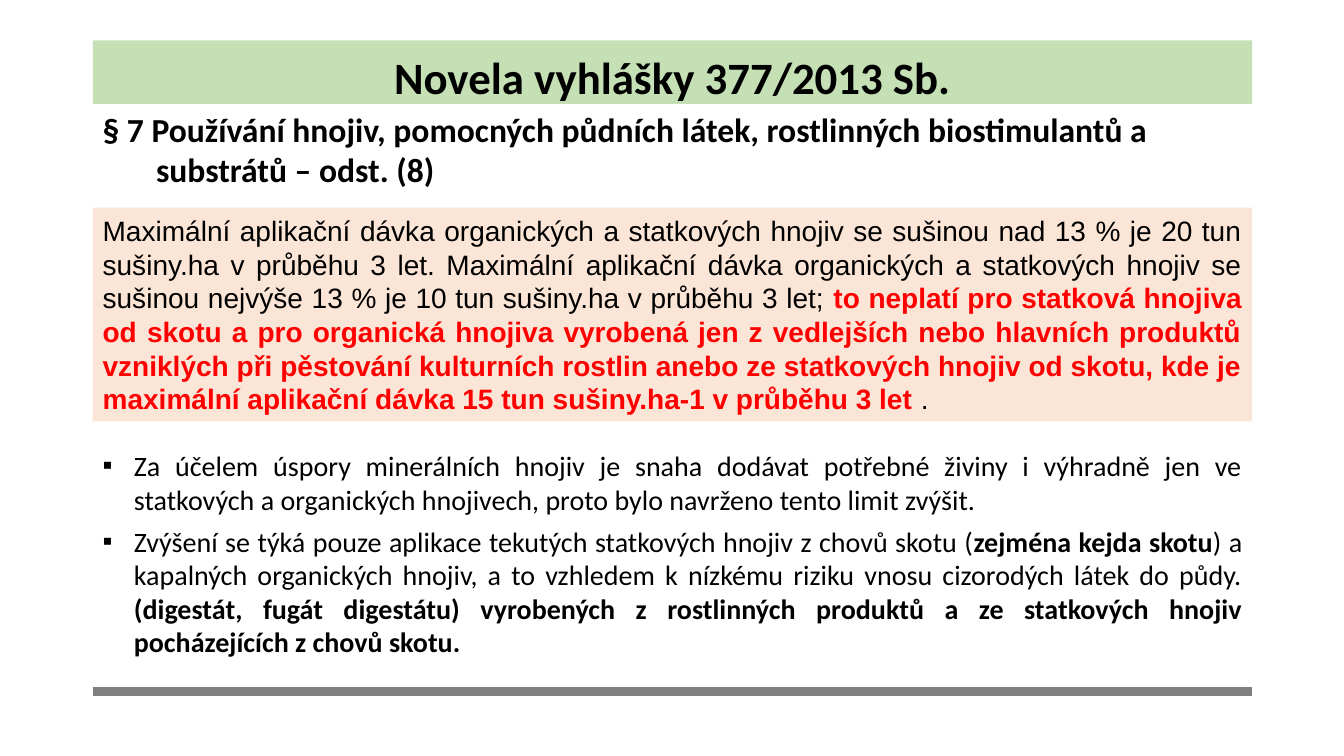
from dataclasses import dataclass

from lxml import etree
from pptx import Presentation
from pptx.dml.color import RGBColor
from pptx.enum.shapes import MSO_CONNECTOR, MSO_SHAPE
from pptx.enum.text import MSO_ANCHOR, MSO_AUTO_SIZE, PP_ALIGN
from pptx.oxml.ns import qn
from pptx.util import Inches, Pt

TOP, MIDDLE = MSO_ANCHOR.TOP, MSO_ANCHOR.MIDDLE
LEFT, CENTER, JUSTIFY = PP_ALIGN.LEFT, PP_ALIGN.CENTER, PP_ALIGN.JUSTIFY
NO_FIT = MSO_AUTO_SIZE.NONE
RECTANGLE, STRAIGHT = MSO_SHAPE.RECTANGLE, MSO_CONNECTOR.STRAIGHT
TITLE_ONLY = 5


@dataclass(frozen=True)
class Theme:
    """Colours, fonts and type sizes of the slide."""
    ink: str = "000000"
    accent: str = "FF0000"
    rule: str = "808080"
    title_fill: str = "C5E0B4"
    quote_fill: str = "FBE5D6"
    font: str = "Calibri"
    quote_font: str = "Arial"
    title_size: int = 32
    heading_size: int = 24
    body_size: int = 20
    rule_width: int = 6


THEME = Theme()
MARGIN, WIDTH = 0.92, 11.5

TITLE = "Novela vyhlášky 377/2013 Sb."
HEADING = (
    "§ 7 Používání hnojiv, pomocných půdních látek, rostlinných biostimulantů a",
    "substrátů – odst. (8)",
)
QUOTE = (
    ("Maximální aplikační dávka organických a statkových hnojiv se sušinou nad 13 % "
     "je 20 tun sušiny.ha v průběhu 3 let. Maximální aplikační dávka organických a "
     "statkových hnojiv se sušinou nejvýše 13 % je 10 tun sušiny.ha v průběhu 3 let; ",
     False),
    ("to neplatí pro statková hnojiva od skotu a pro organická hnojiva vyrobená jen "
     "z vedlejších nebo hlavních produktů vzniklých při pěstování kulturních rostlin "
     "anebo ze statkových hnojiv od skotu, kde je maximální aplikační dávka 15 tun "
     "sušiny.ha-1 v průběhu 3 let ", True),
    (".", False),
)
REASONS = (
    (("Za účelem úspory minerálních hnojiv je snaha dodávat potřebné živiny i výhradně "
      "jen ve statkových a organických hnojivech, proto bylo navrženo tento limit "
      "zvýšit.", False),),
    (("Zvýšení se týká pouze aplikace tekutých statkových hnojiv z chovů skotu (", False),
     ("zejména kejda skotu", True),
     (") a kapalných organických hnojiv, a to vzhledem k nízkému riziku vnosu "
      "cizorodých látek do půdy.", False),
     (" (digestát, fugát digestátu) vyrobených z rostlinných produktů a ze statkových "
      "hnojiv pocházejících z chovů skotu.", True)),
)


def apply_format(target, values):
    """Set each named attribute on the target."""
    for name, value in values.items():
        setattr(target, name, value)


def set_frame(shape, anchor=TOP):
    """Wrap the shape's text, anchor it and return its frame."""
    frame = shape.text_frame
    apply_format(frame, {"word_wrap": True, "auto_size": NO_FIT, "vertical_anchor": anchor})
    return frame


def set_fill(shape, color):
    """Give the shape a solid fill."""
    shape.fill.solid()
    shape.fill.fore_color.rgb = RGBColor.from_string(color)


def add_para(frame, index, **values):
    """Return the paragraph at the next index with its format set."""
    para = frame.add_paragraph() if index else frame.paragraphs[0]
    apply_format(para, {"space_before": Pt(0), "line_spacing": 1.0, **values})
    return para


def add_span(para, text, size, bold=False, color=THEME.ink, font=THEME.font):
    """Add one formatted run to the paragraph."""
    span = para.add_run()
    span.text = text
    apply_format(span.font, {"name": font, "size": Pt(size), "bold": bold})
    span.font.color.rgb = RGBColor.from_string(color)


def set_indent(para, margin, indent):
    """Set the left margin and first-line indent in inches."""
    properties = para._p.get_or_add_pPr()
    properties.set("marL", str(Inches(margin)))
    properties.set("indent", str(Inches(indent)))


def add_bullet(para):
    """Put a small square bullet before the paragraph."""
    set_indent(para, 0.31, -0.31)
    properties = para._p.get_or_add_pPr()
    etree.SubElement(properties, qn("a:buFont")).set("typeface", THEME.quote_font)
    etree.SubElement(properties, qn("a:buChar")).set("char", "▪")


def place_title(page, box):
    """Place the title band."""
    title = page.shapes.title
    names = ("left", "top", "width", "height")
    apply_format(title, dict(zip(names, map(Inches, box))))
    set_fill(title, THEME.title_fill)
    frame = set_frame(title, MIDDLE)
    para = add_para(frame, 0, alignment=CENTER, line_spacing=1.15, space_after=Pt(10))
    add_span(para, TITLE, THEME.title_size, bold=True)


def place_heading(page, box):
    """Place the section heading with its second line indented."""
    frame = set_frame(page.shapes.add_textbox(*map(Inches, box)))
    for index, text in enumerate(HEADING):
        para = add_para(frame, index, alignment=LEFT)
        set_indent(para, 0.53 * index, 0)
        add_span(para, text, THEME.heading_size, bold=True)


def place_quote(page, box):
    """Place the tinted panel with the wording of the regulation."""
    panel = page.shapes.add_shape(RECTANGLE, *map(Inches, box))
    panel.shadow.inherit = False
    panel.line.fill.background()
    set_fill(panel, THEME.quote_fill)
    para = add_para(set_frame(panel, MIDDLE), 0, alignment=JUSTIFY, space_after=Pt(6))
    for text, changed in QUOTE:
        color = THEME.accent if changed else THEME.ink
        add_span(para, text, THEME.body_size, changed, color, THEME.quote_font)


def place_reasons(page, box):
    """Place the bulleted reasons for the change."""
    frame = set_frame(page.shapes.add_textbox(*map(Inches, box)))
    for index, spans in enumerate(REASONS):
        para = add_para(frame, index, alignment=JUSTIFY, space_after=Pt(6))
        add_bullet(para)
        for text, bold in spans:
            add_span(para, text, THEME.body_size, bold)


def place_rule(page, left, top, width):
    """Place the closing rule."""
    ends = map(Inches, (left, top, left + width, top))
    rule = page.shapes.add_connector(STRAIGHT, *ends)
    rule.line.width = Pt(THEME.rule_width)
    rule.line.color.rgb = RGBColor.from_string(THEME.rule)
    etree.SubElement(rule._element.spPr, qn("a:effectLst"))


def main():
    """Build and save the deck."""
    deck = Presentation()
    apply_format(deck, {"slide_width": Inches(13.33), "slide_height": Inches(7.5)})
    page = deck.slides.add_slide(deck.slide_layouts[TITLE_ONLY])
    place_rule(page, MARGIN, 6.86, WIDTH)
    place_title(page, (MARGIN, 0.4, WIDTH, 0.63))
    place_heading(page, (MARGIN, 1.03, WIDTH, 0.95))
    place_quote(page, (MARGIN, 2.06, WIDTH, 2.12))
    place_reasons(page, (MARGIN, 4.4, WIDTH, 2.2))
    deck.save("out.pptx")


if __name__ == "__main__":
    main()
